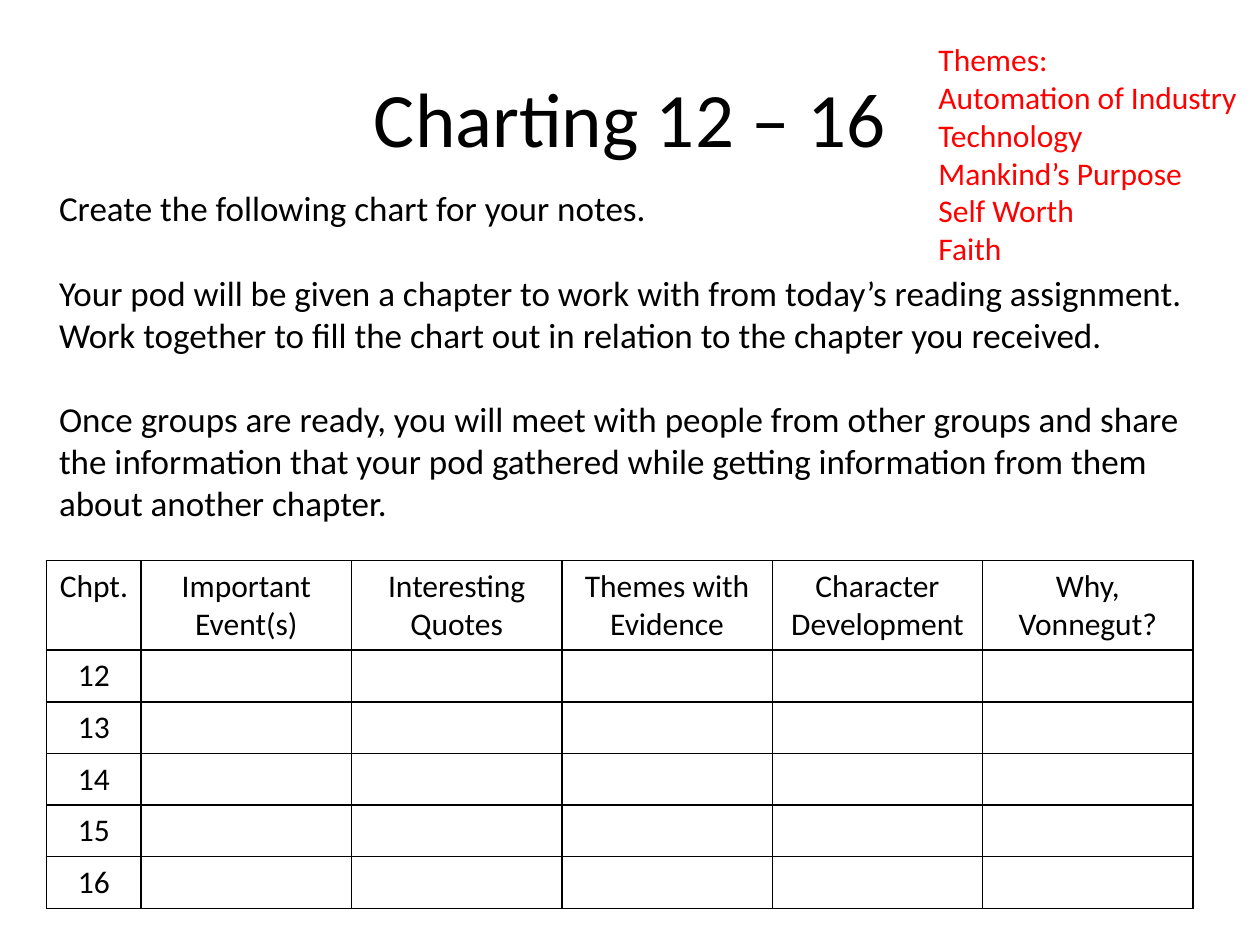
"""Build a slide with chapter-charting instructions and a blank notes table."""
import lxml.etree
import pptx
import pptx.dml.color
import pptx.enum.text
import pptx.oxml.ns
import pptx.util
from pptx.util import Inches

BLACK = pptx.dml.color.RGBColor(0x00, 0x00, 0x00)
RED = pptx.dml.color.RGBColor(0xFF, 0x00, 0x00)
WHITE = pptx.dml.color.RGBColor(0xFF, 0xFF, 0xFF)
FONT = "Calibri"
CENTER = pptx.enum.text.PP_ALIGN.CENTER
LEFT = pptx.enum.text.PP_ALIGN.LEFT
TOP = pptx.enum.text.MSO_ANCHOR.TOP
MIDDLE = pptx.enum.text.MSO_ANCHOR.MIDDLE

INSTRUCTIONS = [
    "Create the following chart for your notes.",
    "Your pod will be given a chapter to work with from today’s reading assignment. "
    "Work together to fill the chart out in relation to the chapter you received.",
    "Once groups are ready, you will meet with people from other groups and share "
    "the information that your pod gathered while getting information from them "
    "about another chapter.",
]
THEMES = ["Themes:", "Automation of Industry", "Technology", "Mankind’s Purpose",
          "Self Worth", "Faith"]
HEADERS = ["Chpt.", "Important Event(s)", "Interesting Quotes", "Themes with Evidence",
           "Character Development", "Why, Vonnegut?"]
CHAPTERS = range(12, 17)


def write_text(text_frame, lines, size=18, color=BLACK, align=LEFT, gap=0):
    """Fill a text frame with one formatted paragraph per line."""
    for index, line in enumerate(lines):
        paragraph = text_frame.paragraphs[0] if index == 0 else text_frame.add_paragraph()
        paragraph.alignment = align
        paragraph.space_before = pptx.util.Pt(gap if index else 0)
        run = paragraph.add_run()
        run.text = line
        run.font.name = FONT
        run.font.size = pptx.util.Pt(size)
        run.font.color.rgb = color


def add_text(slide, left, top, width, height, lines, anchor=TOP, **text_format):
    """Add a wrapping text box."""
    text_frame = slide.shapes.add_textbox(
        Inches(left), Inches(top), Inches(width), Inches(height)).text_frame
    text_frame.word_wrap = True
    text_frame.vertical_anchor = anchor
    write_text(text_frame, lines, **text_format)


def set_borders(cell, color=BLACK, width=1):
    """Draw a solid line on all four sides of a cell."""
    properties = cell._tc.get_or_add_tcPr()
    qualified_name = pptx.oxml.ns.qn
    for side in ("a:lnL", "a:lnR", "a:lnT", "a:lnB"):
        line = lxml.etree.SubElement(
            properties, qualified_name(side), w=str(pptx.util.Pt(width)))
        fill = lxml.etree.SubElement(line, qualified_name("a:solidFill"))
        lxml.etree.SubElement(fill, qualified_name("a:srgbClr"), val=str(color))


def add_notes_table(slide, left, top, column_widths, row_heights, rows):
    """Add a bordered white table with centred text."""
    table = slide.shapes.add_table(
        len(rows), len(column_widths), Inches(left), Inches(top),
        Inches(sum(column_widths)), Inches(sum(row_heights))).table
    table.first_row = False
    table.horz_banding = False
    for column, width in zip(table.columns, column_widths):
        column.width = Inches(width)
    for row_index, (row, height) in enumerate(zip(table.rows, row_heights)):
        row.height = Inches(height)
        for cell, text in zip(row.cells, rows[row_index]):
            set_borders(cell)
            cell.fill.solid()
            cell.fill.fore_color.rgb = WHITE
            cell.vertical_anchor = MIDDLE if row_index else TOP
            if text:
                write_text(cell.text_frame, [text], align=CENTER)


def main():
    """Build and save the slide."""
    presentation = pptx.Presentation()
    presentation.slide_width = Inches(10)
    presentation.slide_height = Inches(7.5)
    slide = presentation.slides.add_slide(presentation.slide_layouts[6])

    add_text(slide, 0.5, 0.3, 9, 1.25, ["Charting 12 – 16"],
             anchor=MIDDLE, size=44, align=CENTER)
    blank_cells = [""] * (len(HEADERS) - 1)
    rows = [HEADERS] + [[str(chapter)] + blank_cells for chapter in CHAPTERS]
    add_notes_table(slide, 0.37, 4.45, [0.75] + [1.67] * len(blank_cells),
                    [0.71] + [0.41] * len(CHAPTERS), rows)
    add_text(slide, 0.37, 1.43, 9.25, 2.79, INSTRUCTIONS, size=20, gap=24.4)
    add_text(slide, 7.35, 0.27, 4.43, 1.92, THEMES, color=RED)
    presentation.save("out.pptx")


if __name__ == "__main__":
    main()
